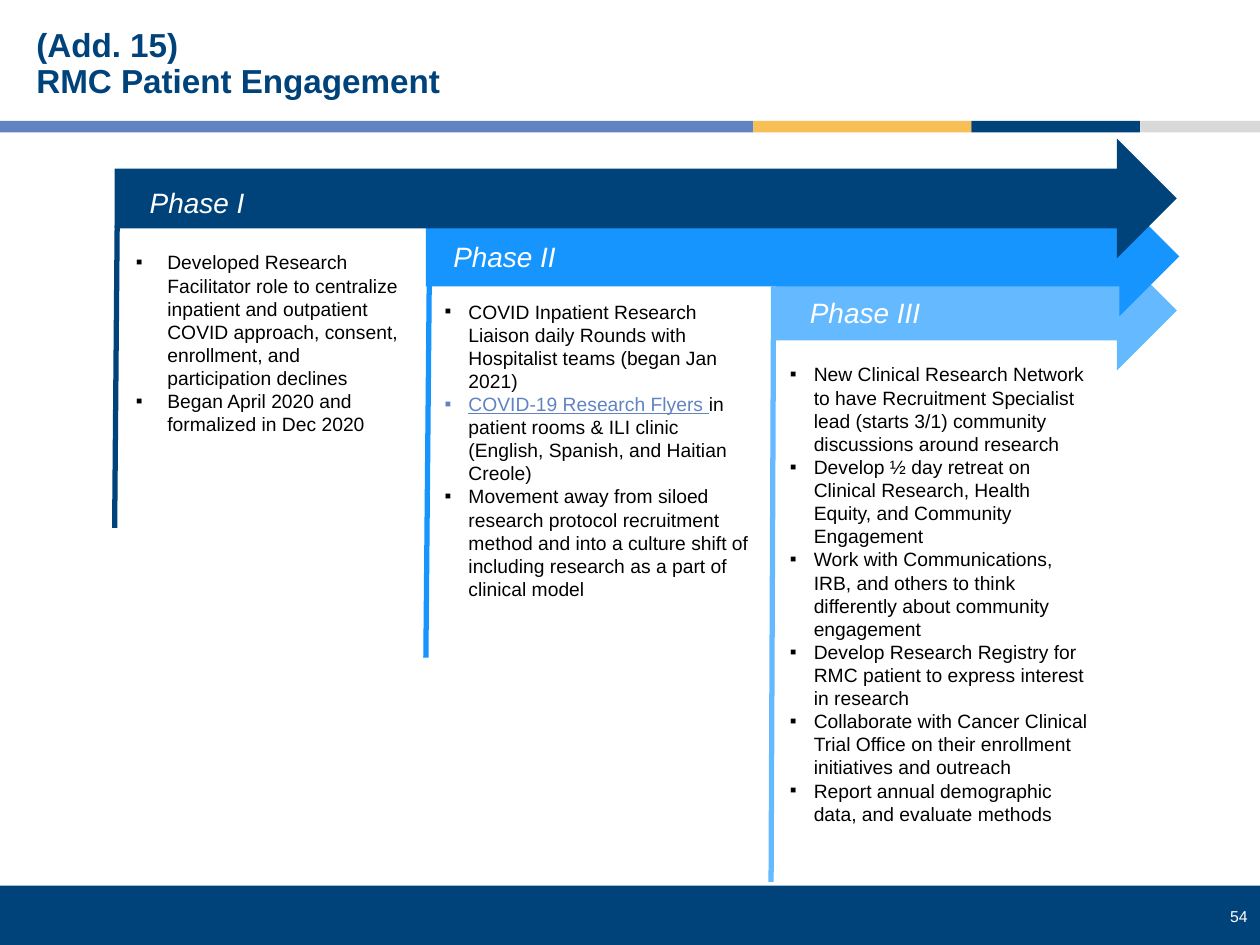
from dataclasses import dataclass

from lxml import etree
from pptx import Presentation
from pptx.dml.color import RGBColor
from pptx.enum.shapes import MSO_CONNECTOR, MSO_SHAPE
from pptx.enum.text import MSO_ANCHOR, PP_ALIGN
from pptx.oxml.ns import qn
from pptx.util import Emu, Pt

RECTANGLE = MSO_SHAPE.RECTANGLE
RIGHT_ARROW = MSO_SHAPE.RIGHT_ARROW
STRAIGHT = MSO_CONNECTOR.STRAIGHT
TOP, MIDDLE = MSO_ANCHOR.TOP, MSO_ANCHOR.MIDDLE
LEFT, RIGHT = PP_ALIGN.LEFT, PP_ALIGN.RIGHT

EMU_PER_PX = 9144  # 100 px to the inch
SLIDE_WIDTH, SLIDE_HEIGHT = 1000, 750


@dataclass(frozen=True)
class Theme:
    font: str = "Arial"
    navy: str = "00437B"
    blue: str = "1795FF"
    sky: str = "64B9FF"
    periwinkle: str = "6283C2"
    gold: str = "F8BF56"
    gray: str = "D9D9D9"
    white: str = "FFFFFF"
    black: str = "000000"
    title_size: int = 19
    phase_size: int = 16
    body_size: int = 11
    number_size: int = 9
    rail_width: int = 3


def px(length):
    return Emu(length * EMU_PER_PX)


def rgb(color):
    return RGBColor.from_string(color)


class SlideBuilder:
    def __init__(self, slide, theme):
        self.slide = slide
        self.theme = theme

    def shape(self, kind, box, color):
        shape = self.slide.shapes.add_shape(kind, *map(px, box))
        shape.shadow.inherit = False
        shape.fill.solid()
        shape.fill.fore_color.rgb = rgb(color)
        shape.line.fill.background()

    def line(self, start, end, color):
        connector = self.slide.shapes.add_connector(
            STRAIGHT, *map(px, (*start, *end)))
        connector.line.color.rgb = rgb(color)
        connector.line.width = Pt(self.theme.rail_width)
        properties = connector._element.spPr
        etree.SubElement(properties, qn("a:effectLst"))

    def text_frame(self, box, anchor=TOP):
        frame = self.slide.shapes.add_textbox(*map(px, box)).text_frame
        frame.word_wrap = True
        frame.vertical_anchor = anchor
        return frame

    def style(self, paragraph, size, color, bold=False, italic=False):
        font = paragraph.font
        font.name = self.theme.font
        font.size = Pt(size)
        font.color.rgb = rgb(color)
        font.bold = bold
        font.italic = italic

    def text(self, text, box, size, color, anchor=TOP, align=LEFT,
             spacing=1.0, bold=False, italic=False):
        paragraph = self.text_frame(box, anchor).paragraphs[0]
        paragraph.text = text
        paragraph.alignment = align
        paragraph.line_spacing = spacing
        self.style(paragraph, size, color, bold, italic)

    def bullets(self, items, box, indent):
        """Each item is a string, or a (linked text, plain text) pair."""
        frame = self.text_frame(box)
        for index, item in enumerate(items):
            paragraph = frame.add_paragraph() if index else frame.paragraphs[0]
            properties = paragraph._p.get_or_add_pPr()
            properties.set("marL", str(px(indent)))
            properties.set("indent", str(-px(indent)))
            etree.SubElement(properties, qn("a:buFont"),
                             typeface=self.theme.font)
            etree.SubElement(properties, qn("a:buChar"), char="▪")
            self.style(paragraph, self.theme.body_size, self.theme.black)
            if isinstance(item, str):
                paragraph.text = item
                continue
            linked, plain = (paragraph.add_run() for _ in item)
            linked.text, plain.text = item
            linked.font.underline = True
            linked.font.color.rgb = rgb(self.theme.periwinkle)
            plain.font.color.rgb = rgb(self.theme.black)


@dataclass(frozen=True)
class Phase:
    name: str
    color: str
    arrow: tuple
    rail: tuple
    label: tuple
    body: tuple
    indent: int
    items: tuple


def phases(theme):
    return (
        Phase("Phase I", theme.navy, (91, 110, 843, 95),
              ((93, 179), (91, 419)), (109, 142, 107, 37),
              (98, 194, 234, 195), 25, (
                  "Developed Research Facilitator role to centralize inpatient "
                  "and outpatient COVID approach, consent, enrollment, and "
                  "participation declines",
                  "Began April 2020 and formalized in Dec 2020")),
        Phase("Phase II", theme.blue, (338, 156, 598, 95),
              ((341, 188), (338, 522)), (350, 185, 116, 37),
              (343, 233, 266, 269), 19, (
                  "COVID Inpatient Research Liaison daily Rounds with "
                  "Hospitalist teams (began Jan 2021)",
                  ("COVID-19 Research Flyers ",
                   "in patient rooms & ILI clinic (English, Spanish, and "
                   "Haitian Creole)"),
                  "Movement away from siloed research protocol recruitment "
                  "method and into a culture shift of including research as a "
                  "part of clinical model")),
        Phase("Phase III", theme.sky, (612, 199, 322, 95),
              ((614, 227), (612, 700)), (633, 230, 136, 37),
              (617, 283, 258, 417), 19, (
                  "New Clinical Research Network to have Recruitment "
                  "Specialist lead (starts 3/1) community discussions around "
                  "research",
                  "Develop ½ day retreat on Clinical Research, Health Equity, "
                  "and Community Engagement",
                  "Work with Communications, IRB, and others to think "
                  "differently about community engagement",
                  "Develop Research Registry for RMC patient to express "
                  "interest in research",
                  "Collaborate with Cancer Clinical Trial Office on their "
                  "enrollment initiatives and outreach",
                  "Report annual demographic data, and evaluate methods")),
    )


def main():
    presentation = Presentation()
    presentation.slide_width = px(SLIDE_WIDTH)
    presentation.slide_height = px(SLIDE_HEIGHT)
    theme = Theme()
    slide = presentation.slides.add_slide(presentation.slide_layouts[6])
    builder = SlideBuilder(slide, theme)

    # Footer with page number
    builder.shape(RECTANGLE, (0, 703, SLIDE_WIDTH, 47), theme.navy)
    builder.text("54", (931, 715, 69, 25), theme.number_size, theme.white,
                 align=RIGHT)

    # Coloured rule under the title, each band ending where the next begins
    bands = ((0, theme.periwinkle), (598, theme.gold),
             (771, theme.navy), (905, theme.gray))
    ends = [left for left, _ in bands[1:]] + [SLIDE_WIDTH]
    for (left, color), end in zip(bands, ends):
        builder.shape(RECTANGLE, (left, 96, end - left, 9), color)

    # Title
    builder.text("(Add. 15)\vRMC Patient Engagement", (19, 17, 957, 69),
                 theme.title_size, theme.navy, anchor=MIDDLE, spacing=0.9,
                 bold=True)

    # Arrows, the first phase in front
    timeline = phases(theme)
    for phase in reversed(timeline):
        builder.shape(RIGHT_ARROW, phase.arrow, phase.color)

    # Rails, phase names and bullets
    for phase in timeline:
        builder.line(*phase.rail, phase.color)
        builder.text(phase.name, phase.label, theme.phase_size, theme.white,
                     italic=True)
        builder.bullets(phase.items, phase.body, phase.indent)

    presentation.save("out.pptx")


if __name__ == "__main__":
    main()
